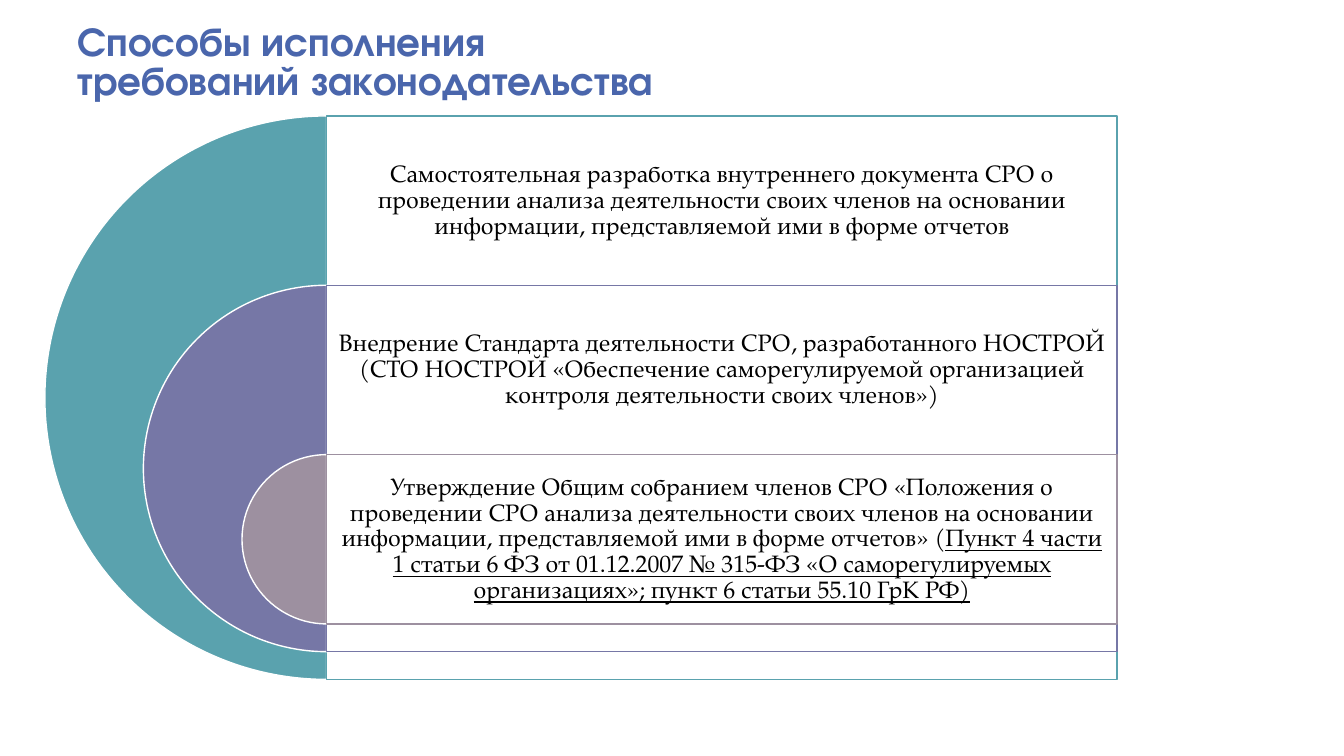
"""Build a slide with three nested half circles, each opening into a text panel."""
from lxml.etree import SubElement
from pptx import Presentation
from pptx.dml.color import RGBColor
from pptx.enum.shapes import MSO_SHAPE as Shape
from pptx.enum.text import MSO_ANCHOR as Anchor, PP_ALIGN as Align
from pptx.oxml.ns import qn
from pptx.util import Inches, Pt

COLORS = {"title": "4A66AC", "text": "000000", "white": "FFFFFF",
          "outer": "5AA2AE", "middle": "7677A6", "inner": "9D90A0"}
TITLE_FONT = {"name": "TeX Gyre Adventor", "size": Pt(29), "bold": True}
BODY_FONT = {"name": "TeX Gyre Pagella", "size": Pt(17)}

AXIS, TOP, PANEL_WIDTH = 3.24, 1.15, 7.84
ROW, DIAMETER, SHRINK = 1.68, 5.59, 1.955

LEVELS = [
    ("outer", [("Самостоятельная разработка внутреннего документа СРО о проведении анализа "
                "деятельности своих членов на основании информации, представляемой ими "
                "в форме отчетов", False)]),
    ("middle", [("Внедрение Стандарта деятельности СРО, разработанного НОСТРОЙ (СТО НОСТРОЙ "
                 "«Обеспечение саморегулируемой организацией контроля деятельности "
                 "своих членов»)", False)]),
    ("inner", [("Утверждение Общим собранием членов СРО «Положения о проведении СРО анализа "
                "деятельности своих членов на основании информации, представляемой ими "
                "в форме отчетов» (", False),
               ("Пункт 4 части 1 статьи 6 ФЗ от 01.12.2007 № 315-ФЗ «О саморегулируемых "
                "организациях»; пункт 6 статьи 55.10 ГрК РФ)", True)]),
]


def add_span(para, text, color, font):
    span = para.add_run()
    span.text = text
    span.font.color.rgb = RGBColor.from_string(COLORS[color])
    for name, value in font.items():
        setattr(span.font, name, value)


def add_figure(kind, place, fill, line):
    figure = page.shapes.add_shape(kind, *map(Inches, place))
    figure.shadow.inherit = False
    figure.fill.solid()
    figure.fill.fore_color.rgb = RGBColor.from_string(COLORS[fill])
    figure.line.color.rgb = RGBColor.from_string(COLORS[line])
    figure.line.width = Pt(1)
    return figure


deck = Presentation()
deck.slide_width, deck.slide_height = Inches(13.33), Inches(7.5)
page = deck.slides.add_slide(deck.slide_layouts[6])

title = page.shapes.add_textbox(*map(Inches, (0.67, 0.25, 12, 0.82))).text_frame
title.word_wrap = True
title.vertical_anchor = Anchor.BOTTOM
heading = title.paragraphs[0]
heading.line_spacing = 0.8
add_span(heading, "Способы исполнения ", "title", TITLE_FONT)
heading.add_line_break()
add_span(heading, "требований законодательства", "title", TITLE_FONT)

for index, (color, spans) in enumerate(LEVELS):
    top = TOP + index * ROW
    size = DIAMETER - index * SHRINK

    half = add_figure(Shape.PIE, (AXIS - size / 2, top, size, size), color, "white")
    half.adjustments[0], half.adjustments[1] = 54, 162

    panel = add_figure(Shape.RECTANGLE, (AXIS, top, PANEL_WIDTH, size), "white", color)
    tint = panel.fill._xPr.find(qn("a:solidFill"))[0]
    SubElement(tint, qn("a:alpha"), val="90000")

    box = page.shapes.add_textbox(*map(Inches, (AXIS, top, PANEL_WIDTH, ROW)))
    frame = box.text_frame
    frame.word_wrap = True
    frame.vertical_anchor = Anchor.MIDDLE
    for side in ("left", "top", "right", "bottom"):
        setattr(frame, f"margin_{side}", Inches(0.07))
    para = frame.paragraphs[0]
    para.alignment = Align.CENTER
    para.line_spacing = 0.9
    for text, underline in spans:
        add_span(para, text, "text", {**BODY_FONT, "underline": underline})

deck.save("out.pptx")
